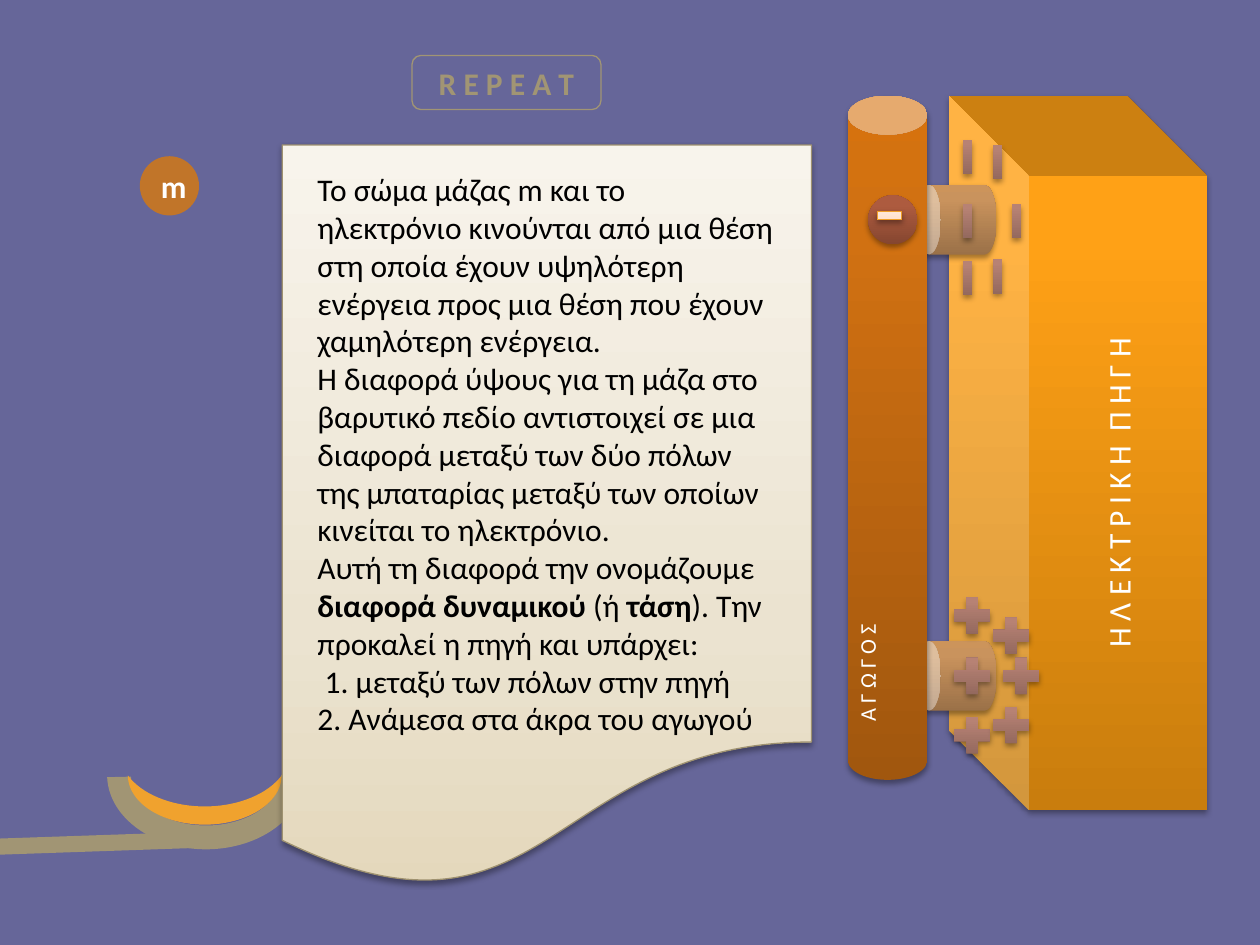
from pptx import Presentation
from pptx.dml.color import RGBColor
from pptx.enum.shapes import MSO_SHAPE as Shape
from pptx.enum.text import MSO_ANCHOR as Anchor, PP_ALIGN as Align
from pptx.oxml import parse_xml
from pptx.oxml.ns import nsdecls
from pptx.util import Inches, Pt

BACKGROUND = RGBColor(0x66, 0x66, 0x99)
KHAKI = RGBColor(0xA1, 0x95, 0x74)
PAPER_EDGE = RGBColor(0x9F, 0x92, 0x70)
AMBER = RGBColor(0xF0, 0xA2, 0x2E)
MINUS_EDGE = RGBColor(0xEF, 0x9F, 0x28)
MASS = RGBColor(0xC1, 0x75, 0x29)
WHITE = RGBColor(0xFF, 0xFF, 0xFF)
BLACK = RGBColor(0, 0, 0)

# Gradients run from bottom to top: (position in percent, colour)
SOURCE = [(0, RGBColor(0xC9, 0x7D, 0x0D)), (80, RGBColor(0xFF, 0xA1, 0x16)),
          (100, RGBColor(0xFF, 0xA2, 0x17))]
POLE = [(0, RGBColor(0x9B, 0x71, 0x48)), (80, RGBColor(0xC9, 0x93, 0x5D)),
        (100, RGBColor(0xCC, 0x94, 0x5B))]
CHARGE = [(0, RGBColor(0x8D, 0x64, 0x5A)), (80, RGBColor(0xB7, 0x82, 0x74)),
          (100, RGBColor(0xB9, 0x82, 0x74))]
CONDUCTOR = [(0, RGBColor(0xA1, 0x57, 0x0E)), (80, RGBColor(0xD1, 0x71, 0x12)),
             (100, RGBColor(0xD6, 0x72, 0x0E))]
ELECTRON = [(0, RGBColor(0x85, 0x46, 0x30)), (80, RGBColor(0xAD, 0x5B, 0x3F)),
            (100, RGBColor(0xAF, 0x5A, 0x3D))]
MINUS = [(0, RGBColor(0xFF, 0xD6, 0xB7)), (35, RGBColor(0xFF, 0xE1, 0xCC)),
         (100, RGBColor(0xFF, 0xF3, 0xEC))]
PAPER = [(0, RGBColor(0xE4, 0xD8, 0xBC)), (35, RGBColor(0xEB, 0xE3, 0xD0)),
         (100, RGBColor(0xF8, 0xF4, 0xEC))]

# Each paragraph is a list of (text, bold) runs
EXPLANATION = [
    [("Το σώμα μάζας m και το ηλεκτρόνιο κινούνται από μια θέση στη οποία "
      "έχουν υψηλότερη ενέργεια προς μια θέση που έχουν χαμηλότερη ενέργεια.", False)],
    [("Η διαφορά ύψους για τη μάζα στο βαρυτικό πεδίο αντιστοιχεί σε μια "
      "διαφορά μεταξύ των δύο πόλων της μπαταρίας μεταξύ των οποίων κινείται "
      "το ηλεκτρόνιο.", False)],
    [("Αυτή τη διαφορά την ονομάζουμε ", False), ("διαφορά δυναμικού", True),
     (" (ή ", False), ("τάση", True),
     ("). Την προκαλεί η πηγή και υπάρχει:", False)],
    [(" 1. μεταξύ των πόλων στην πηγή", False)],
    [("2. Ανάμεσα στα άκρα του αγωγού", False)],
]


def add_flat(slide, kind, box, fill=None, line=None, rotation=0, adjust=()):
    """Preset shape with a plain fill (or none) and no shadow."""
    shape = slide.shapes.add_shape(kind, *map(Inches, box))
    shape.rotation = rotation
    shape.shadow.inherit = False
    for index, value in enumerate(adjust):
        shape.adjustments[index] = value
    if fill is None:
        shape.fill.background()
    else:
        shape.fill.solid()
        shape.fill.fore_color.rgb = fill
    if line is None:
        shape.line.fill.background()
    else:
        shape.line.color.rgb = line
        shape.line.width = Pt(0.75)
    return shape


def add_raised(slide, kind, box, stops, **options):
    """Preset shape with an upright gradient and a soft shadow below."""
    shape = add_flat(slide, kind, box, **options)
    properties = shape.element.spPr
    stop_xml = "".join(f'<a:gs pos="{position * 1000}"><a:srgbClr val="{color}"/></a:gs>'
                       for position, color in stops)
    gradient = parse_xml(
        f'<a:gradFill {nsdecls("a")} rotWithShape="0"><a:gsLst>{stop_xml}</a:gsLst>'
        '<a:lin ang="16200000" scaled="0"/></a:gradFill>')
    no_fill = properties.find("{*}noFill")
    properties.replace(no_fill, gradient)
    effects = properties.find("{*}effectLst")
    effects.append(parse_xml(
        f'<a:outerShdw {nsdecls("a")} blurRad="{Pt(3.1)}" dist="{Pt(1.8)}" '
        'dir="5400000" rotWithShape="0"><a:srgbClr val="000000">'
        '<a:alpha val="35000"/></a:srgbClr></a:outerShdw>'))
    return shape


def format_run(run, color, size=18, bold=False):
    run.font.name = "Calibri"
    run.font.size = Pt(size)
    run.font.bold = bold
    run.font.color.rgb = color


def add_label(shape, text, color, size=18, bold=False):
    frame = shape.text_frame
    frame.text = text
    frame.vertical_anchor = Anchor.MIDDLE
    frame.paragraphs[0].alignment = Align.CENTER
    format_run(frame.paragraphs[0].runs[0], color, size, bold)


def set_insets(frame, left, top, right, bottom):
    frame.margin_left, frame.margin_top = Inches(left), Inches(top)
    frame.margin_right, frame.margin_bottom = Inches(right), Inches(bottom)


def add_mass_track(slide):
    add_flat(slide, Shape.BLOCK_ARC, (0.85, 5.56, 1.57, 1.18), KHAKI,
             rotation=180, adjust=(108, 215.23, 0.16))
    add_flat(slide, Shape.DIAGONAL_STRIPE, (-0.12, 6.52, 1.89, 0.47), KHAKI,
             rotation=12, adjust=(0.72,))
    add_flat(slide, Shape.MOON, (1.43, 5.74, 0.39, 1.22), AMBER,
             rotation=270, adjust=(0.37,))
    mass = add_flat(slide, Shape.OVAL, (1.11, 1.24, 0.47, 0.47), MASS)
    add_label(mass, "m", WHITE, bold=True)


def add_source(slide):
    battery = add_raised(slide, Shape.CUBE, (5.72, 2.57, 5.67, 2.05), SOURCE,
                         rotation=270, adjust=(0.31,))
    add_label(battery, "Η Λ Ε Κ Τ Ρ Ι Κ Η  Π Η Γ Η", WHITE)
    for top in (1.43, 5.05):
        add_raised(slide, Shape.CAN, (7.32, top, 0.55, 0.63), POLE,
                   rotation=270, adjust=(0.34,))
    # Charges gathered around the positive and the negative pole
    for left, top in ((7.52, 4.69), (7.83, 4.85), (7.91, 5.17),
                      (7.52, 5.64), (7.52, 5.17), (7.83, 5.56)):
        add_raised(slide, Shape.MATH_PLUS, (left, top, 0.39, 0.39), CHARGE, rotation=270)
    for left, top in ((7.5, 2.05), (7.74, 2.04), (7.5, 1.09),
                      (7.89, 1.6), (7.74, 1.13), (7.5, 1.6)):
        add_raised(slide, Shape.MATH_MINUS, (left, top, 0.36, 0.31), CHARGE, rotation=270)


def add_conductor(slide):
    wire = add_raised(slide, Shape.CAN, (6.73, 0.76, 0.63, 5.43), CONDUCTOR,
                      adjust=(0.49,))
    add_label(wire, "α γ ω γ ο σ", WHITE, size=16)
    frame = wire.text_frame
    frame.vertical_anchor = Anchor.TOP
    set_insets(frame, 0, 0.05, 0.1, 0.05)
    body = wire.element.txBody.bodyPr
    body.set("vert", "vert270")
    body.set("numCol", "4")
    frame.paragraphs[0].runs[0].font._element.set("cap", "small")
    # Electron inside the conductor
    add_raised(slide, Shape.OVAL, (6.89, 1.55, 0.39, 0.39), ELECTRON)
    add_raised(slide, Shape.MATH_MINUS, (6.93, 1.58, 0.26, 0.26), MINUS, line=MINUS_EDGE)


def add_explanation(slide):
    paper = add_raised(slide, Shape.FLOWCHART_DOCUMENT, (2.24, 1.15, 4.2, 5.91),
                       PAPER, line=PAPER_EDGE)
    frame = paper.text_frame
    frame.word_wrap = True
    frame.vertical_anchor = Anchor.TOP
    set_insets(frame, 0.28, 0.2, 0.28, 0.2)
    for index, parts in enumerate(EXPLANATION):
        paragraph = frame.add_paragraph() if index else frame.paragraphs[0]
        paragraph.alignment = Align.LEFT
        for text, bold in parts:
            run = paragraph.add_run()
            run.text = text
            format_run(run, BLACK, bold=bold)


def main():
    deck = Presentation()
    deck.slide_width, deck.slide_height = Inches(10), Inches(7.5)
    slide = deck.slides.add_slide(deck.slide_layouts[6])
    slide.background.fill.solid()
    slide.background.fill.fore_color.rgb = BACKGROUND

    add_mass_track(slide)
    add_source(slide)
    add_conductor(slide)
    repeat = add_flat(slide, Shape.ROUNDED_RECTANGLE, (3.27, 0.44, 1.5, 0.43), line=KHAKI)
    add_label(repeat, "R E P E A T", KHAKI, bold=True)
    add_explanation(slide)
    deck.save("out.pptx")


if __name__ == "__main__":
    main()
